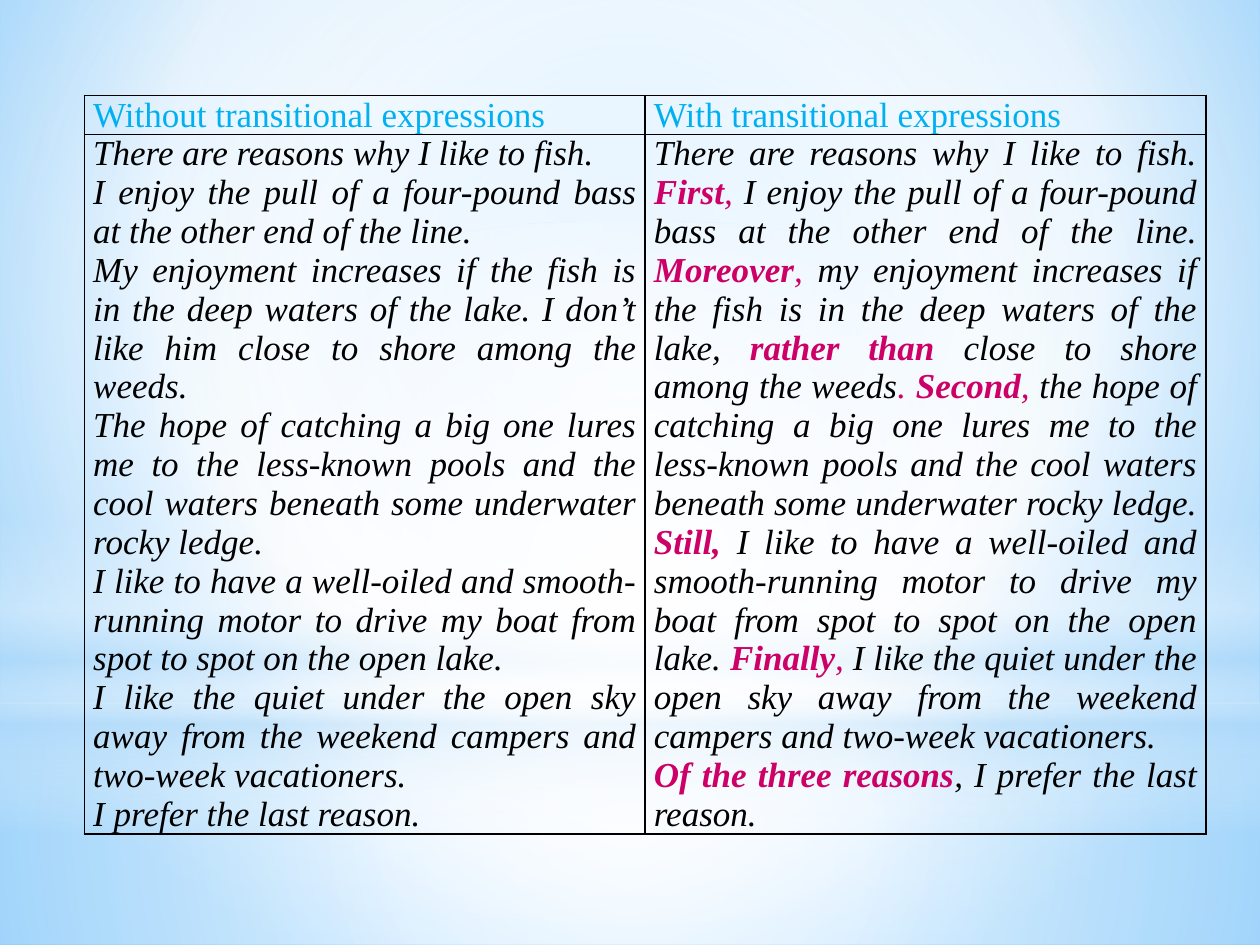
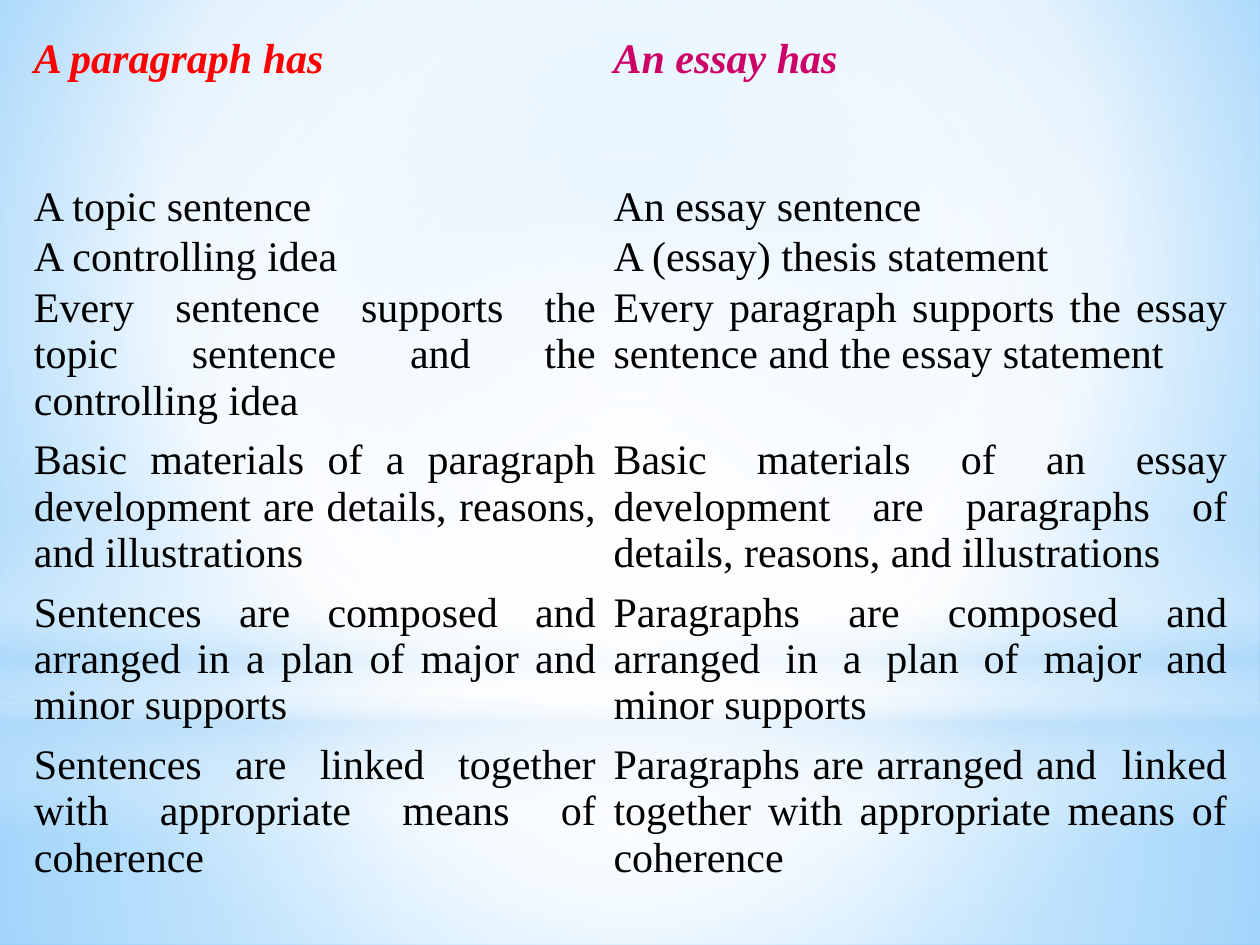
from dataclasses import dataclass

from lxml import etree
from pptx import Presentation
from pptx import util as u
from pptx.dml.color import RGBColor
from pptx.enum import shapes, text
from pptx.oxml import ns

Inches = u.Inches
FONT = "Times New Roman"
BLACK, PINK, RED, CYAN = "000000", "CC0066", "FF0000", "00B0F0"
WHITE, PALE = "FFFFFF", "B4DCFA"
CENTRE = (50, 50, 50, 50)


@dataclass
class Span:
    words: str
    colour: str = BLACK
    bold: bool = False
    italic: bool = False


def story(words):
    return Span(words, italic=True)


def link(words, bold=True):
    """A highlighted transitional expression or its punctuation."""
    return Span(words, PINK, bold, True)


def rgb(code):
    return RGBColor.from_string(code)


def add_xml(parent, tag, **attributes):
    child = etree.SubElement(parent, ns.qn(f"a:{tag}"))
    for name, value in attributes.items():
        child.set(name, str(value))
    return child


def set_gradient(fill, owner, stops, focus=None):
    """Fill with (position, colour, opacity) stops, round focus or downwards."""
    fill.gradient()
    gradient = owner.find(".//" + ns.qn("a:gradFill"))
    gradient.clear()
    gradient.set("rotWithShape", "1")
    stop_list = add_xml(gradient, "gsLst")
    for position, colour, opacity in stops:
        stop = add_xml(stop_list, "gs", pos=position * 1000)
        shade = add_xml(stop, "srgbClr", val=colour)
        if opacity < 100:
            add_xml(shade, "alpha", val=opacity * 1000)
    if focus:
        circle = add_xml(gradient, "path", path="circle")
        sides = {side: share * 1000 for side, share in zip("ltrb", focus)}
        add_xml(circle, "fillToRect", **sides)
    else:
        add_xml(gradient, "lin", ang=90 * 60000, scaled=0)


def set_background(deck):
    master = deck.slide_master
    stops = [(0, "9ED5FF", 100), (60, WHITE, 100), (100, "5BB9FF", 100)]
    set_gradient(master.background.fill, master.element, stops, (20, 10, 20, 60))


def add_glow(page, kind, top, height, stops, focus=CENTRE):
    """A borderless gradient shape across the full page width."""
    glow = page.shapes.add_shape(kind, 0, Inches(top), Inches(10), Inches(height))
    glow.shadow.inherit = False
    glow.line.fill.background()
    set_gradient(glow.fill, glow.element, stops, focus)


def add_page(deck):
    page = deck.slides.add_slide(deck.slide_layouts[6])
    band, oval = shapes.MSO_SHAPE.RECTANGLE, shapes.MSO_SHAPE.OVAL
    add_glow(page, band, 5.58, 1.92,
             [(0, WHITE, 91), (37, WHITE, 76), (100, PALE, 79)])
    add_glow(page, band, 0, 5.58,
             [(0, WHITE, 89), (48, WHITE, 62), (100, PALE, 79)])
    add_glow(page, band, 4.12, 2.5,
             [(0, WHITE, 0), (29, WHITE, 30), (45, PALE, 40),
              (55, WHITE, 26), (65, PALE, 60), (100, WHITE, 0)], None)
    add_glow(page, oval, 1.75, 5.58, [(0, WHITE, 100), (56, WHITE, 0)])
    return page


def set_borders(cell, colour):
    properties = cell._tc.get_or_add_tcPr()
    for side in "LRTB":
        edge = add_xml(properties, f"ln{side}", w=u.Pt(1))
        if colour:
            add_xml(add_xml(edge, "solidFill"), "srgbClr", val=colour)
        else:
            add_xml(edge, "noFill")


def write_cell(cell, paragraphs, size):
    cell.margin_left = cell.margin_right = Inches(0.07)
    cell.margin_top = cell.margin_bottom = 0
    frame = cell.text_frame
    for index, spans in enumerate(paragraphs):
        para = frame.add_paragraph() if index else frame.paragraphs[0]
        para.alignment = text.PP_ALIGN.JUSTIFY
        for span in spans:
            run = para.add_run()
            run.text = span.words
            run.font.name = FONT
            run.font.size = u.Pt(size)
            run.font.bold = span.bold
            run.font.italic = span.italic
            run.font.color.rgb = rgb(span.colour)


def add_text_table(page, left, top, widths, heights, rows, size, border=None):
    """A clear table; each cell is a list of paragraphs made of spans."""
    table = page.shapes.add_table(
        len(heights), len(widths), Inches(left), Inches(top),
        Inches(sum(widths)), Inches(sum(heights))).table
    table.first_row = table.horz_banding = False
    for column, width in zip(table.columns, widths):
        column.width = Inches(width)
    for row, height, contents in zip(table.rows, heights, rows):
        row.height = Inches(height)
        for cell, paragraphs in zip(row.cells, contents):
            set_borders(cell, border)
            cell.fill.background()
            write_cell(cell, paragraphs, size)


def add_transitions(deck):
    headings = ["Without transitional expressions", "With transitional expressions"]
    plain = [
        "There are reasons why I like to fish. ",
        "I enjoy the pull of a four-pound bass at the other end of the line. ",
        "My enjoyment increases if the fish is in the deep waters of the lake. "
        "I don’t like him close to shore among the weeds. ",
        "The hope of catching a big one lures me to the less-known pools and the "
        "cool waters beneath some underwater rocky ledge. ",
        "I like to have a well-oiled and smooth-running motor to drive my boat "
        "from spot to spot on the open lake. ",
        "I like the quiet under the open sky away from the weekend campers and "
        "two-week vacationers. ",
        "I prefer the last reason.",
    ]
    opening, pull, _, hope, motor, quiet, _ = plain
    comma = link(", ", bold=False)
    linked = [
        [story(opening), link("First"), comma, story(pull),
         link("Moreover"), comma,
         story("my enjoyment increases if the fish is in the deep waters of the lake, "),
         link("rather than "), story("close to shore among the weeds"),
         link(". ", bold=False), link("Second"), comma,
         story(hope.replace("The", "the", 1))],
        [link("Still, "), story(motor), link("Finally"), comma, story(quiet)],
        [link("Of the three reasons"), story(", I prefer the last reason.")],
    ]
    rows = [
        [[[Span(heading, CYAN)]] for heading in headings],
        [[[story(sentence)] for sentence in plain], linked],
    ]
    add_text_table(add_page(deck), 0.67, 0.76, [4.45, 4.45], [0.3, 5.41],
                   rows, 20, BLACK)


def add_comparison(deck):
    pairs = [
        ("A topic sentence", "An essay sentence"),
        ("A controlling idea", "A (essay) thesis statement"),
        ("Every sentence supports the topic sentence and the controlling idea",
         "Every paragraph supports the essay sentence and the essay statement"),
        ("Basic materials of a paragraph development are details, reasons, "
         "and illustrations",
         "Basic materials of an essay development are paragraphs of details, "
         "reasons, and illustrations"),
        ("Sentences are composed and arranged in a plan of major and minor supports",
         "Paragraphs are composed and arranged in a plan of major and minor supports"),
        ("Sentences are linked together with appropriate means of coherence",
         "Paragraphs are arranged and  linked together with appropriate means "
         "of coherence"),
    ]
    headings = [[[Span("A paragraph has", RED, True, True)]],
                [[Span("An essay has", PINK, True, True)]]]
    rows = [headings] + [[[[Span(words)]] for words in pair] for pair in pairs]
    heights = [1.17, 0.4, 0.4, 1.21, 1.21, 1.21, 2.23]
    add_text_table(add_page(deck), 0.2, 0.29, [4.6, 5.01], heights, rows, 24)


def main():
    deck = Presentation()
    deck.slide_width, deck.slide_height = Inches(10), Inches(7.5)
    set_background(deck)
    add_transitions(deck)
    add_comparison(deck)
    deck.save("out.pptx")


if __name__ == "__main__":
    main()
